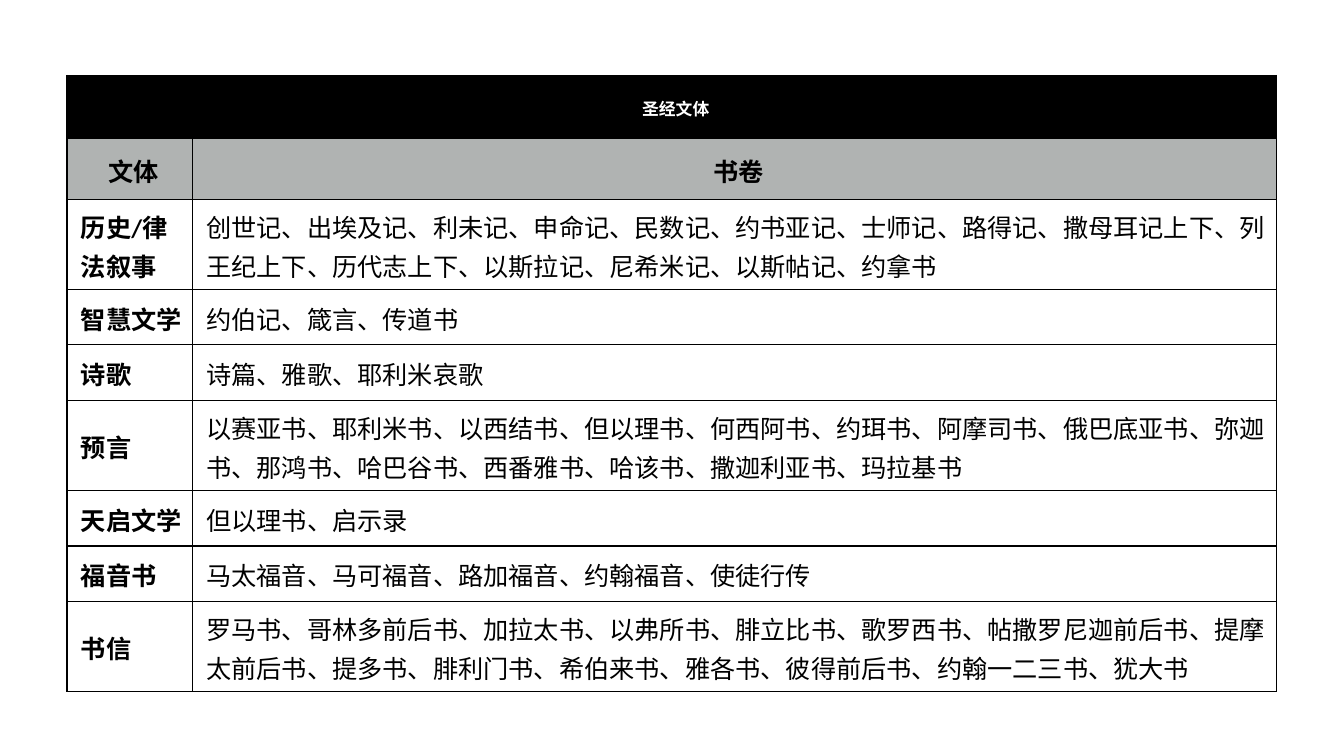
from dataclasses import dataclass

import pptx
import pptx.dml.color
import pptx.enum.text
import pptx.oxml
import pptx.oxml.ns
import pptx.util

Cm = pptx.util.Cm
Pt = pptx.util.Pt
PP_ALIGN = pptx.enum.text.PP_ALIGN


@dataclass(frozen=True)
class Theme:
    """Colours, font and type sizes of the slide."""
    font: str = "Calibri"
    black: str = "000000"
    white: str = "FFFFFF"
    grey: str = "B0B3B2"
    title_size: int = 12
    body_size: int = 18


THEME = Theme()
TITLE = "圣经文体"
HEADINGS = ("文体", "书卷")
GENRES = [
    ("历史/律法叙事", "创世记、出埃及记、利未记、申命记、民数记、约书亚记、士师记、路得记、撒母耳记上下、"
                "列王纪上下、历代志上下、以斯拉记、尼希米记、以斯帖记、约拿书"),
    ("智慧文学", "约伯记、箴言、传道书"),
    ("诗歌", "诗篇、雅歌、耶利米哀歌"),
    ("预言", "以赛亚书、耶利米书、以西结书、但以理书、何西阿书、约珥书、阿摩司书、俄巴底亚书、"
           "弥迦书、那鸿书、哈巴谷书、西番雅书、哈该书、撒迦利亚书、玛拉基书"),
    ("天启文学", "但以理书、启示录"),
    ("福音书", "马太福音、马可福音、路加福音、约翰福音、使徒行传"),
    ("书信", "罗马书、哥林多前后书、加拉太书、以弗所书、腓立比书、歌罗西书、帖撒罗尼迦前后书、"
           "提摩太前后书、提多书、腓利门书、希伯来书、雅各书、彼得前后书、约翰一二三书、犹大书"),
]
CHARS_PER_LINE = 42


def rgb(value):
    """Return a colour from its hex value."""
    return pptx.dml.color.RGBColor.from_string(value)


def write(tf, text, size=THEME.body_size, color=THEME.black, bold=True, align=PP_ALIGN.LEFT):
    """Write one formatted paragraph into a text frame."""
    p = tf.paragraphs[0]
    p.alignment = align
    p.line_spacing = 1.07
    p._p.get_or_add_pPr().set("marL", str(Cm(0.2)))
    r = p.add_run()
    r.text = text
    r.font.name = THEME.font
    r.font.size = Pt(size)
    r.font.bold = bold
    r.font.color.rgb = rgb(color)


def style_cell(cell, fill, margin):
    """Give a cell its borders, fill, margins and vertical centring."""
    tcPr = cell._tc.get_or_add_tcPr()
    for side in ("lnL", "lnR", "lnT", "lnB"):
        tcPr.append(pptx.oxml.parse_xml(
            f'<a:{side} {pptx.oxml.ns.nsdecls("a")} w="{Pt(1)}"><a:solidFill>'
            f'<a:srgbClr val="{THEME.black}"/></a:solidFill></a:{side}>'))
    cell.fill.solid()
    cell.fill.fore_color.rgb = rgb(fill)
    cell.margin_left = cell.margin_right = cell.margin_top = cell.margin_bottom = margin
    cell.vertical_anchor = pptx.enum.text.MSO_ANCHOR.MIDDLE


def add_genre_table(s, left, top, width, genre_width):
    """Place the table of genres and their books in the given box."""
    heights = [Cm(1.6), Cm(1.52)]
    heights += [Cm(2.27 if len(books) > CHARS_PER_LINE else 1.4) for _, books in GENRES]
    frame = s.shapes.add_table(len(heights), 2, left, top, width, sum(heights))
    table = frame.table
    table.columns[0].width = genre_width
    table.columns[1].width = width - genre_width
    for i, height in enumerate(heights):
        table.rows[i].height = height
        fill = (THEME.black, THEME.grey)[i] if i < 2 else THEME.white
        for cell in table.rows[i].cells:
            style_cell(cell, fill, Cm(0.18 if i < 2 else 0.15))
    table.cell(0, 0).merge(table.cell(0, 1))
    write(table.cell(0, 0).text_frame, TITLE, size=THEME.title_size,
          color=THEME.white, align=PP_ALIGN.CENTER)
    for col, heading in enumerate(HEADINGS):
        write(table.cell(1, col).text_frame, heading, align=PP_ALIGN.CENTER)
    for row, (genre, books) in enumerate(GENRES, start=2):
        write(table.cell(row, 0).text_frame, genre)
        write(table.cell(row, 1).text_frame, books, bold=False)


def main():
    """Build and save the slide."""
    prs = pptx.Presentation()
    prs.slide_width, prs.slide_height = Cm(33.87), Cm(19.05)
    s = prs.slides.add_slide(prs.slide_layouts[6])
    add_genre_table(s, Cm(1.69), Cm(1.9), Cm(30.48), Cm(3.16))
    prs.save("out.pptx")


if __name__ == "__main__":
    main()
